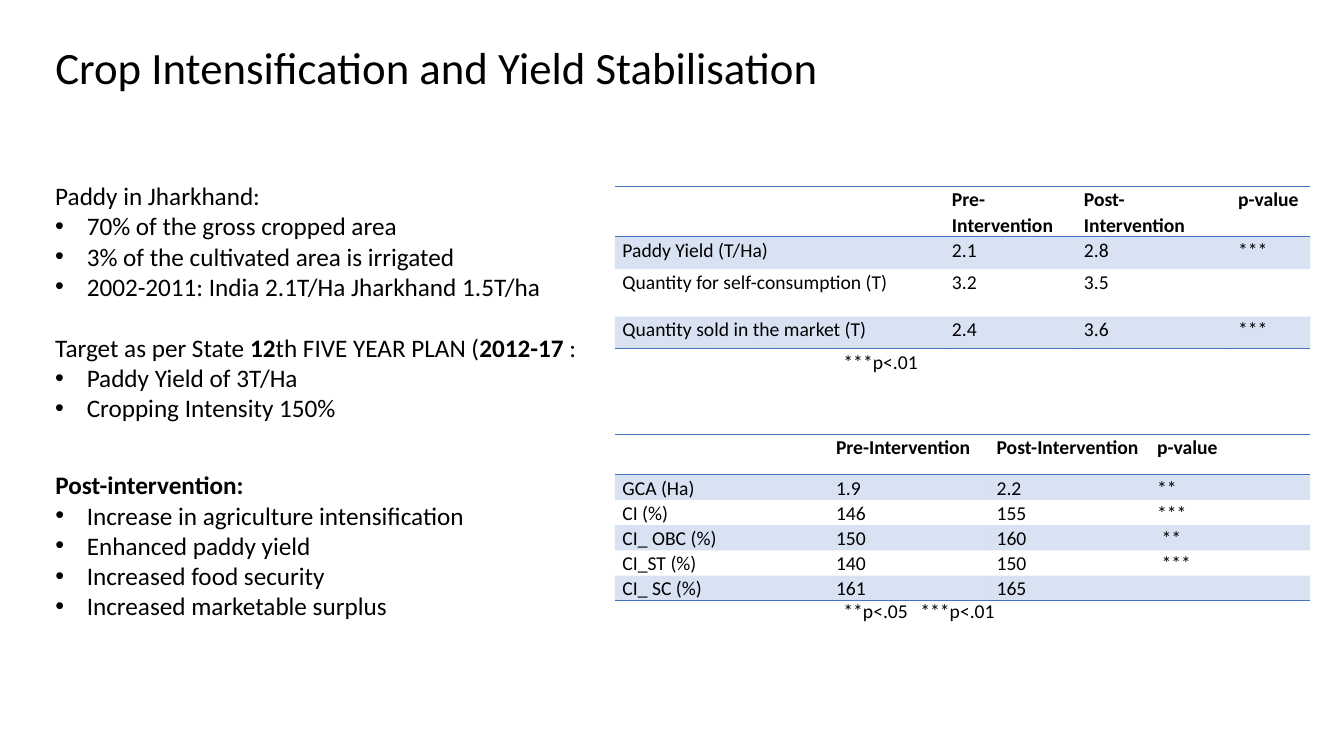
import pptx
import pptx.dml.color
import pptx.enum.text
import pptx.oxml
import pptx.oxml.ns
import pptx.util
from lxml import etree

Pt = pptx.util.Pt
FONT, INK, ACCENT = "Calibri", "000000", "4472C4"
NO_STYLE = "{2D5ABB26-0587-4C30-8999-92F81FD0307C}"
BULLET_INDENT = 22.5

TITLE = "Crop Intensification and Yield Stabilisation"
HEADING, BULLET = "heading", "bullet"

# Each line: kind, space before, then (text, bold) runs
JHARKHAND = [
    (HEADING, 0, [("Paddy in Jharkhand:", False)]),
    (BULLET, 0, [("70% of the gross cropped area", False)]),
    (BULLET, 0, [("3% of the cultivated area is irrigated", False)]),
    (BULLET, 0, [("2002-2011: India 2.1T/Ha Jharkhand 1.5T/ha", False)]),
    (HEADING, 22, [("Target as per State ", False), ("12", True),
                   ("th FIVE YEAR PLAN (", False), ("2012-17 ", True), (":", False)]),
    (BULLET, 0, [("Paddy Yield of 3T/Ha", False)]),
    (BULLET, 0, [("Cropping Intensity 150%", False)]),
]
POST_INTERVENTION = [
    (HEADING, 0, [("Post-intervention:", True)]),
    (BULLET, 0, [("Increase in agriculture intensification", False)]),
    (BULLET, 0, [("Enhanced paddy yield", False)]),
    (BULLET, 0, [("Increased food security", False)]),
    (BULLET, 0, [("Increased marketable surplus", False)]),
]
HEADER = ["", "Pre-Intervention", "Post-Intervention", "p-value"]
PADDY = [
    HEADER,
    ["Paddy Yield (T/Ha)", "2.1", "2.8", "***"],
    ["Quantity for self-consumption (T)", "3.2", "3.5", ""],
    ["Quantity sold in the market (T)", "2.4", "3.6", "***"],
]
CROPPING = [
    HEADER,
    ["GCA (Ha)", "1.9", "2.2", "**"],
    ["CI (%)", "146", "155", "***"],
    ["CI_ OBC (%)", "150", "160", " **"],
    ["CI_ST (%)", "140", "150", " ***"],
    ["CI_ SC (%)", "161", "165", ""],
]
PADDY_NOTE = "***p<.01"
CROPPING_NOTE = "**p<.05\t***p<.01"


def color(hex_code):
    return pptx.dml.color.RGBColor.from_string(hex_code)


def child(parent, tag, **attributes):
    return etree.SubElement(parent, pptx.oxml.ns.qn(tag), attributes)


def write(paragraph, text, size=18, bold=False):
    run = paragraph.add_run()
    run.text = text
    run.font.name, run.font.size, run.font.bold = FONT, Pt(size), bold
    run.font.color.rgb = color(INK)


def text_box(slide, left, top, width, height):
    frame = slide.shapes.add_textbox(Pt(left), Pt(top), Pt(width), Pt(height)).text_frame
    frame.word_wrap = True
    frame.auto_size = pptx.enum.text.MSO_AUTO_SIZE.SHAPE_TO_FIT_TEXT
    return frame


def add_lines(frame, lines):
    for index, (kind, space_before, runs) in enumerate(lines):
        paragraph = frame.add_paragraph() if index else frame.paragraphs[0]
        paragraph.space_before = Pt(space_before)
        if kind == BULLET:
            properties = paragraph._p.get_or_add_pPr()
            properties.set("marL", str(Pt(BULLET_INDENT)))
            properties.set("indent", str(-Pt(BULLET_INDENT)))
            child(properties, "a:buFont", typeface="Arial")
            child(properties, "a:buChar", char="•")
        for text, bold in runs:
            write(paragraph, text, bold=bold)


def rule(cell, side):
    """Draw the accent line on one side of a cell; call before filling it."""
    line = child(cell._tc.get_or_add_tcPr(), "a:ln" + side, w=str(Pt(1)))
    child(child(line, "a:solidFill"), "a:srgbClr", val=ACCENT)


def shade(cell):
    """Fill with the accent at 20% opacity."""
    cell.fill.solid()
    cell.fill.fore_color.rgb = color(ACCENT)
    tint = cell._tc.tcPr.find(".//" + pptx.oxml.ns.qn("a:srgbClr"), None)
    for tint in cell._tc.tcPr.findall(pptx.oxml.ns.qn("a:solidFill") + "/*"):
        child(tint, "a:alpha", val="20000")


def add_results(slide, rows, left, top, widths, heights):
    table = slide.shapes.add_table(len(rows), len(widths), Pt(left), Pt(top),
                                   Pt(sum(widths)), Pt(sum(heights))).table
    table.first_row = table.horz_banding = False
    table._tbl.tblPr.find(pptx.oxml.ns.qn("a:tableStyleId")).text = NO_STYLE
    for column, width in zip(table.columns, widths):
        column.width = Pt(width)
    for r, (values, height) in enumerate(zip(rows, heights)):
        table.rows[r].height = Pt(height)
        for c, text in enumerate(values):
            cell = table.cell(r, c)
            cell.margin_left = cell.margin_right = Pt(5.4)
            cell.margin_top = cell.margin_bottom = 0
            if r == 0:
                rule(cell, "T")
            if r in (0, len(rows) - 1):
                rule(cell, "B")
            if r % 2:
                shade(cell)
            else:
                cell.fill.background()
            paragraph = cell.text_frame.paragraphs[0]
            paragraph.alignment = pptx.enum.text.PP_ALIGN.JUSTIFY
            paragraph.line_spacing = 1.07
            if text:
                write(paragraph, text, size=14, bold=r == 0)
            else:
                child(paragraph._p, "a:endParaRPr", sz="1400")


def main():
    deck = pptx.Presentation()
    deck.slide_width, deck.slide_height = Pt(960), Pt(540)
    slide = deck.slides.add_slide(deck.slide_layouts[6])

    margin, table_left, note_left = 32.4, 439.2, 595.4
    write(text_box(slide, margin, 24.5, 874, 46).paragraphs[0], TITLE, size=32)
    add_lines(text_box(slide, margin, 125.3, 393, 203.8), JHARKHAND)
    add_lines(text_box(slide, margin, 331.9, 320.4, 116.6), POST_INTERVENTION)

    add_results(slide, PADDY, table_left, 133.2,
                [235.4, 94.3, 110.2, 56.9], [34, 23, 34, 23])
    write(text_box(slide, note_left, 246.2, 111.6, 24.5).paragraphs[0], PADDY_NOTE, size=14)

    add_results(slide, CROPPING, table_left, 310.3,
                [152.6] + [114.7] * 3, [28.8] + [17.3] * 5)
    note = text_box(slide, note_left, 424.1, 151.2, 24.5).paragraphs[0]
    stops = child(note._p.get_or_add_pPr(), "a:tabLst")
    child(stops, "a:tab", pos=str(Pt(55)), algn="l")
    write(note, CROPPING_NOTE, size=14)

    deck.save("out.pptx")


if __name__ == "__main__":
    main()
